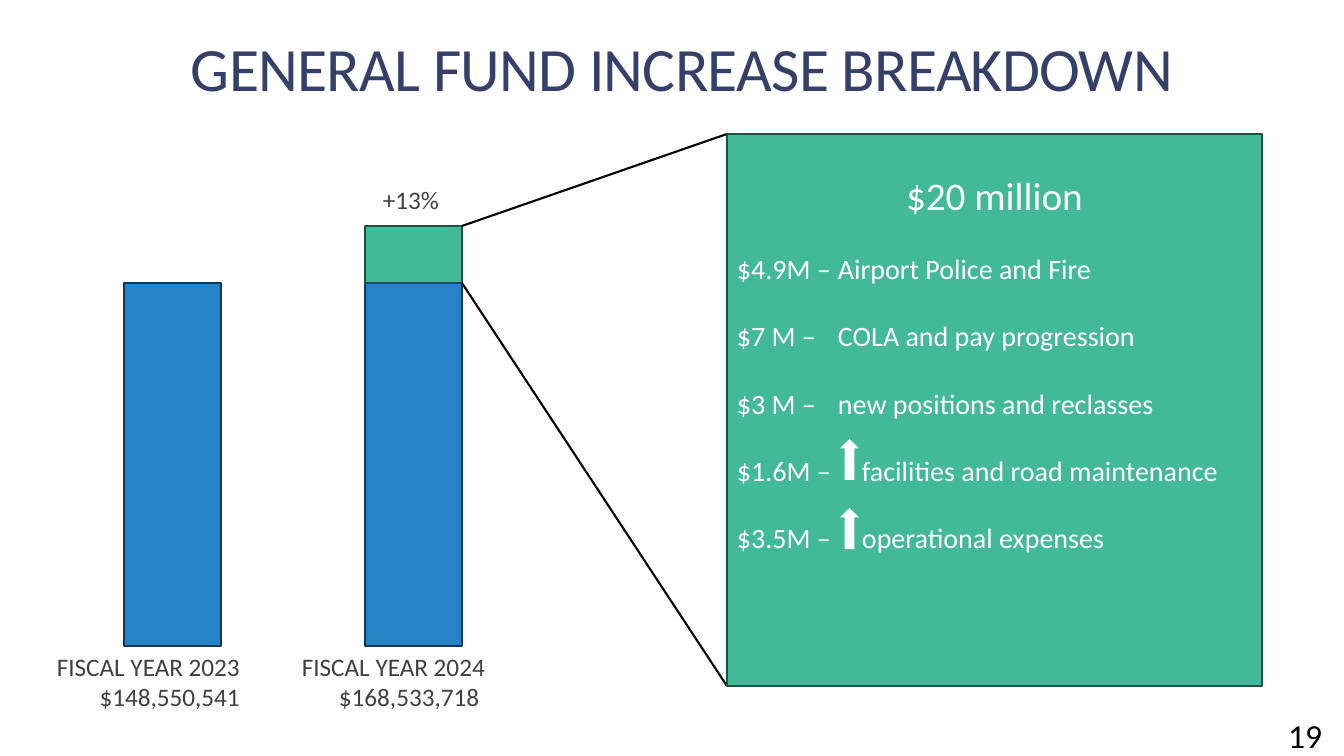
from lxml.etree import SubElement
from pptx import Presentation
from pptx.dml.color import RGBColor
from pptx.enum.shapes import MSO_CONNECTOR, MSO_SHAPE
from pptx.enum.text import MSO_ANCHOR, PP_ALIGN
from pptx.oxml.ns import qn
from pptx.util import Pt

PX = 914400 / 100.8
FONT = "Calibri"
NAVY = RGBColor(0x34, 0x40, 0x68)
GREY = RGBColor(0x40, 0x40, 0x40)
BLUE = RGBColor(0x26, 0x83, 0xC6)
BLUE_EDGE = RGBColor(0x11, 0x39, 0x57)
GREEN = RGBColor(0x42, 0xBA, 0x97)
GREEN_EDGE = RGBColor(0x1D, 0x52, 0x42)
WHITE = RGBColor(0xFF, 0xFF, 0xFF)
BLACK = RGBColor(0, 0, 0)

YEARS = [("FISCAL YEAR 2023", "$148,550,541"),
         ("FISCAL YEAR 2024", "$168,533,718 ")]
# Amount, purpose, whether an up arrow stands before the purpose
ITEMS = [("$4.9M –", "Airport Police and Fire", False),
         ("$7 M –", "COLA and pay progression", False),
         ("$3 M –", "new positions and reclasses", False),
         ("$1.6M –", "facilities and road maintenance", True),
         ("$3.5M –", "operational expenses", True)]


def px(*values):
    return [round(v * PX) for v in values]


def style(para, size, color, align):
    para.alignment = align
    for run in para.runs:
        run.font.name = FONT
        run.font.size = Pt(size)
        run.font.color.rgb = color


def add_text(slide, box, text, size, color, align, anchor=MSO_ANCHOR.TOP, pad=0):
    frame = slide.shapes.add_textbox(*px(*box)).text_frame
    frame.word_wrap = True
    frame.vertical_anchor = anchor
    frame.margin_left = frame.margin_right = px(pad)[0]
    frame.text = text
    for para in frame.paragraphs:
        style(para, size, color, align)
    return frame


def add_block(slide, kind, box, fill, edge=None):
    shape = slide.shapes.add_shape(kind, *px(*box))
    shape.shadow.inherit = False
    shape.fill.solid()
    shape.fill.fore_color.rgb = fill
    if edge is None:
        shape.line.fill.background()
    else:
        shape.line.color.rgb = edge
        shape.line.width = Pt(1.25)
    return shape


def add_line(slide, start, end):
    line = slide.shapes.add_connector(MSO_CONNECTOR.STRAIGHT, *px(*start, *end))
    line.line.color.rgb = BLACK
    line.line.width = Pt(1.5)
    SubElement(line._element.spPr, qn("a:effectLst"))


def set_tab(para, pos):
    tabs = SubElement(para._p.get_or_add_pPr(), qn("a:tabLst"))
    SubElement(tabs, qn("a:tab"), pos=str(px(pos)[0]), algn="l")


def add_title(slide, box):
    frame = add_text(slide, box, "GENERAL FUND INCREASE BREAKDOWN", 44, NAVY,
                     PP_ALIGN.CENTER, MSO_ANCHOR.MIDDLE, 10)
    para = frame.paragraphs[0]
    para.line_spacing = 0.85
    para.runs[0].font._element.set("spc", "-50")


def add_bars(slide, box):
    """Draw a bar per year and return the box of the increase."""
    left, top, width, height = box
    bar, rise, step = 97, 57, 241
    base = top + height
    for i, label in enumerate(YEARS):
        x = left + i * step
        add_block(slide, MSO_SHAPE.RECTANGLE, (x, top + rise, bar, height - rise),
                  BLUE, BLUE_EDGE)
        add_text(slide, (left - 93 + i * 245, base, 209, 86), "\n".join(label),
                 18, GREY, PP_ALIGN.RIGHT)
    part = (left + width - bar, top, bar, rise)
    add_block(slide, MSO_SHAPE.RECTANGLE, part, GREEN, GREEN_EDGE)
    add_text(slide, (part[0], top - 47, 74, 37), "+13%", 18, GREY, PP_ALIGN.RIGHT)
    return part


def add_panel(slide, box):
    left, top, width, height = box
    panel = add_block(slide, MSO_SHAPE.RECTANGLE, box, GREEN, GREEN_EDGE)
    frame = panel.text_frame
    frame.word_wrap = True
    frame.vertical_anchor = MSO_ANCHOR.TOP
    frame.margin_left = frame.margin_right = px(10)[0]
    frame.margin_top = px(37)[0]
    frame.text = "$20 million"
    style(frame.paragraphs[0], 28, WHITE, PP_ALIGN.CENTER)
    for i, (sum_, use, rise) in enumerate(ITEMS):
        para = frame.add_paragraph()
        para.text = f"{sum_}\t{use}"
        style(para, 20, WHITE, PP_ALIGN.LEFT)
        para.space_before = Pt(24)
        set_tab(para, 125 if rise else 101)
        if rise:
            add_block(slide, MSO_SHAPE.UP_ARROW,
                      (left + 113, top + 98 + i * 69, 19, 41), WHITE)


def add_zoom(slide, part, panel):
    """Join the right corners of the part to the left corners of the panel."""
    x, y, width, height = part
    left, top, _, tall = panel
    add_line(slide, (x + width, y), (left, top))
    add_line(slide, (x + width, y + height), (left, top + tall))


def main():
    deck = Presentation()
    deck.slide_width, deck.slide_height = px(1344, 756)
    slide = deck.slides.add_slide(deck.slide_layouts[6])
    panel = (727, 134, 535, 552)
    add_title(slide, (51, 13, 1262, 120))
    part = add_bars(slide, (124, 226, 338, 420))
    add_zoom(slide, part, panel)
    add_panel(slide, panel)
    add_text(slide, (1188, 715, 144, 40), "19", 24, BLACK, PP_ALIGN.RIGHT,
             MSO_ANCHOR.MIDDLE, 10)
    deck.save("out.pptx")


if __name__ == "__main__":
    main()
